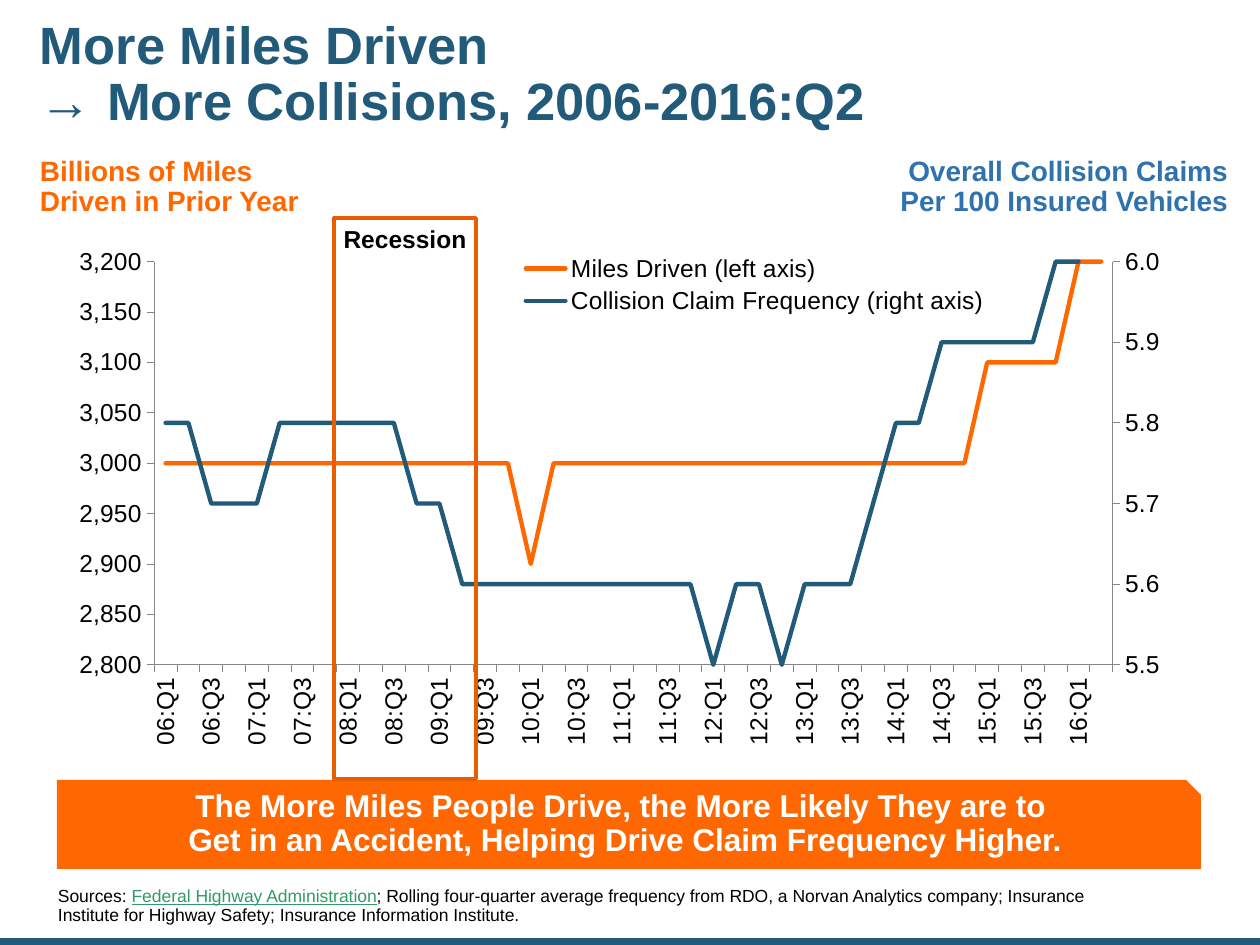
from copy import deepcopy

from lxml import etree
from pptx import Presentation
from pptx import util as u
from pptx.chart import data
from pptx.dml.color import RGBColor
from pptx.enum import chart as ch
from pptx.enum import shapes, text
from pptx.oxml import ns

NAVY = RGBColor(0x22, 0x5A, 0x7A)
ORANGE = RGBColor(0xFF, 0x68, 0x01)
DEEP_ORANGE = RGBColor(0xE7, 0x5E, 0x01)
BLUE = RGBColor(0x2F, 0x72, 0xAD)
GREEN = RGBColor(0x33, 0x99, 0x66)
GRAY = RGBColor(0x86, 0x86, 0x86)
BLACK = RGBColor(0, 0, 0)
WHITE = RGBColor(0xFF, 0xFF, 0xFF)
LEFT, CENTER, RIGHT = text.PP_ALIGN.LEFT, text.PP_ALIGN.CENTER, text.PP_ALIGN.RIGHT
TOP, MIDDLE, BOTTOM = text.MSO_ANCHOR.TOP, text.MSO_ANCHOR.MIDDLE, text.MSO_ANCHOR.BOTTOM

QUARTERS = [f"{year:02}:Q{q}" for year in range(6, 17) for q in range(1, 5)][:42]
MILES = [3000] * 16 + [2900] + [3000] * 19 + [3100] * 4 + [3200] * 2
CLAIMS = [
    5.8, 5.8, 5.7, 5.7, 5.7, 5.8, 5.8, 5.8, 5.8, 5.8, 5.8, 5.7, 5.7, 5.6,
    5.6, 5.6, 5.6, 5.6, 5.6, 5.6, 5.6, 5.6, 5.6, 5.6, 5.5, 5.6, 5.6, 5.5,
    5.6, 5.6, 5.6, 5.7, 5.8, 5.8, 5.9, 5.9, 5.9, 5.9, 5.9, 6, 6, None,
]


def px(n):
    """Turn slide pixels into EMU."""
    return u.Emu(round(n * 914400 / 126))


def style(paragraph, size, color, bold=True, align=LEFT, spacing=0.9):
    """Set the alignment, spacing and font of a paragraph."""
    paragraph.alignment = align
    paragraph.line_spacing = spacing
    font = paragraph.font
    font.name, font.size, font.bold = "Arial", u.Pt(size), bold
    font.color.rgb = color


def set_frame(frame, anchor, insets, wrap=True):
    """Set the anchor, wrapping and insets of a text frame."""
    frame.word_wrap, frame.vertical_anchor = wrap, anchor
    frame.margin_left, frame.margin_top, frame.margin_right, frame.margin_bottom = map(px, insets)


def add_heading(slide, box, words, size, color, align=LEFT, anchor=TOP, side=6):
    """Place a bold heading in the box."""
    frame = slide.shapes.add_textbox(*map(px, box)).text_frame
    set_frame(frame, anchor, (side, 6, side, 6))
    frame.paragraphs[0].text = words
    style(frame.paragraphs[0], size, color, align=align)


def add_panel(slide, box, preset, fill=None, outline=None):
    """Place a flat preset shape in the box."""
    panel = slide.shapes.add_shape(preset, *map(px, box))
    panel.shadow.inherit = False
    if fill is None:
        panel.fill.background()
    else:
        panel.fill.solid()
        panel.fill.fore_color.rgb = fill
    if outline is None:
        panel.line.fill.background()
    else:
        panel.line.color.rgb, panel.line.width = outline, u.Pt(2.25)
    return panel


def add_takeaway(slide, box, lines):
    """Place the orange banner with its centred lines."""
    banner = add_panel(slide, box, shapes.MSO_SHAPE.SNIP_1_RECTANGLE, ORANGE)
    frame = banner.text_frame
    set_frame(frame, MIDDLE, (13, 6, 13, 13))
    frame.text = "\n".join(lines)
    for line in frame.paragraphs:
        style(line, 18, WHITE, align=CENTER)


def add_recession(slide, box):
    """Place the outlined recession period."""
    period = add_panel(slide, box, shapes.MSO_SHAPE.RECTANGLE, outline=DEEP_ORANGE)
    set_frame(period.text_frame, TOP, (13, 6, 13, 6), wrap=False)
    label = period.text_frame.paragraphs[0]
    label.text = "Recession"
    style(label, 14, BLACK, align=CENTER, spacing=1.0)


def add_sources(slide, box):
    """Place the source note with its underlined agency."""
    frame = slide.shapes.add_textbox(*map(px, box)).text_frame
    set_frame(frame, BOTTOM, (0, 0, 0, 0))
    note = frame.paragraphs[0]
    style(note, 10, BLACK, bold=False)
    note.add_run().text = "Sources: "
    agency = note.add_run()
    agency.text = "Federal Highway Administration"
    agency.font.color.rgb, agency.font.underline = GREEN, True
    note.add_run().text = (
        "; Rolling four-quarter average frequency from RDO, a Norvan Analytics company; "
        "Insurance Institute for Highway Safety; Insurance Information Institute."
    )


def c_element(tag, **attributes):
    """Make a chart element."""
    return etree.Element(ns.qn(f"c:{tag}"), attributes)


def manual_layout(x, y, w, h, inner=False):
    """Make a manual layout in fractions of the chart."""
    layout = c_element("layout")
    manual = c_element("manualLayout")
    layout.append(manual)
    if inner:
        manual.append(c_element("layoutTarget", val="inner"))
    for tag in ("xMode", "yMode"):
        manual.append(c_element(tag, val="edge"))
    for tag, value in zip("xywh", (x, y, w, h)):
        manual.append(c_element(tag, val=str(value)))
    return layout


def move_claims_to_right_axis(chart):
    """Give the second series its own value axis on the right."""
    plot_area = chart.plots[0]._element.getparent()
    miles_plot = plot_area.find(ns.qn("c:lineChart"))
    claims_plot = deepcopy(miles_plot)
    miles_plot.remove(miles_plot.findall(ns.qn("c:ser"))[1])
    claims_plot.remove(claims_plot.find(ns.qn("c:ser")))
    miles_plot.addnext(claims_plot)
    quarters = chart.category_axis._element
    miles_axis = chart.value_axis._element
    hidden, claims_axis = deepcopy(quarters), deepcopy(miles_axis)
    miles_axis.addnext(claims_axis)
    claims_axis.addnext(hidden)
    for axis, own, other in ((hidden, "5001", "5002"), (claims_axis, "5002", "5001")):
        axis.find(ns.qn("c:axId")).set("val", own)
        axis.find(ns.qn("c:crossAx")).set("val", other)
    for axis_id, value in zip(claims_plot.findall(ns.qn("c:axId")), ("5001", "5002")):
        axis_id.set("val", value)
    hidden.find(ns.qn("c:delete")).set("val", "1")
    for tag, value in (("axPos", "r"), ("crosses", "max"), ("majorUnit", "0.1")):
        claims_axis.find(ns.qn(f"c:{tag}")).set("val", value)
    claims_axis.find(ns.qn("c:numFmt")).set("formatCode", "0.0")
    scaling = claims_axis.find(ns.qn("c:scaling"))
    scaling.find(ns.qn("c:max")).set("val", "6")
    scaling.find(ns.qn("c:min")).set("val", "5.5")


def add_trends(slide, box):
    """Place the line chart of miles driven and collision claims."""
    trends = data.CategoryChartData()
    trends.categories = QUARTERS
    trends.add_series("Miles Driven (left axis)", MILES, "#,##0")
    trends.add_series("Collision Claim Frequency (right axis)", CLAIMS, "0.0")
    chart = slide.shapes.add_chart(ch.XL_CHART_TYPE.LINE, *map(px, box), trends).chart
    chart.has_title = False
    chart.font.name, chart.font.size, chart.font.color.rgb = "Arial", u.Pt(14), BLACK
    chart.plots[0].vary_by_categories = False
    for series, color in zip(chart.plots[0].series, (ORANGE, NAVY)):
        series.smooth = False
        line = series.format.line
        line.color.rgb, line.width = color, u.Pt(2.5)
        series._element.find(f"{ns.qn('c:spPr')}/{ns.qn('a:ln')}").set("cap", "rnd")
        series.marker.style = ch.XL_MARKER_STYLE.NONE
    quarters, miles = chart.category_axis, chart.value_axis
    for axis in (quarters, miles):
        axis.has_major_gridlines = False
        axis.major_tick_mark = ch.XL_TICK_MARK.OUTSIDE
        axis.format.line.color.rgb, axis.format.line.width = GRAY, u.Pt(0.5)
    quarters.tick_labels.font.size = u.Pt(14)
    quarters._element.find(ns.qn("c:txPr")).find(ns.qn("a:bodyPr")).set("rot", "-5400000")
    quarters._element.find(ns.qn("c:noMultiLvlLbl")).addprevious(c_element("tickLblSkip", val="2"))
    miles.minimum_scale, miles.maximum_scale, miles.major_unit = 2800, 3200, 50
    miles.tick_labels.number_format = "#,##0"
    miles.tick_labels.number_format_is_linked = False
    move_claims_to_right_axis(chart)
    plot_area = chart.plots[0]._element.getparent()
    for layout in plot_area.findall(ns.qn("c:layout")):
        plot_area.remove(layout)
    plot_area.insert(0, manual_layout(0.085, 0.06, 0.838, 0.699, inner=True))
    chart.has_legend = True
    legend = chart.legend
    legend.position, legend.include_in_layout = ch.XL_LEGEND_POSITION.BOTTOM, False
    for layout in legend._element.findall(ns.qn("c:layout")):
        legend._element.remove(layout)
    legend._element.find(ns.qn("c:legendPos")).addnext(manual_layout(0.4, 0.04, 0.42, 0.12))


def main():
    """Build the slide and save it."""
    deck = Presentation()
    deck.slide_width, deck.slide_height = px(1260), px(945)
    slide = deck.slides.add_slide(deck.slide_layouts[6])
    add_panel(slide, (0, 938, 1260, 7), shapes.MSO_SHAPE.RECTANGLE, NAVY)
    add_heading(slide, (34, 10, 1166, 131), "More Miles Driven\v→ More Collisions, 2006-2016:Q2", 30, NAVY, anchor=MIDDLE)
    add_heading(slide, (34, 151, 285, 54), "Billions of Miles Driven in Prior Year", 16, ORANGE)
    add_sources(slide, (58, 868, 1058, 57))
    add_takeaway(slide, (57, 780, 1144, 89), (
        "The More Miles People Drive, the More Likely They are to ",
        "Get in an Accident, Helping Drive Claim Frequency Higher.",
    ))
    add_trends(slide, (57, 227, 1144, 577))
    add_heading(slide, (871, 151, 370, 63), "Overall Collision Claims Per 100 Insured Vehicles", 16, BLUE, RIGHT, side=13)
    add_recession(slide, (334, 218, 142, 561))
    deck.save("out.pptx")


if __name__ == "__main__":
    main()
